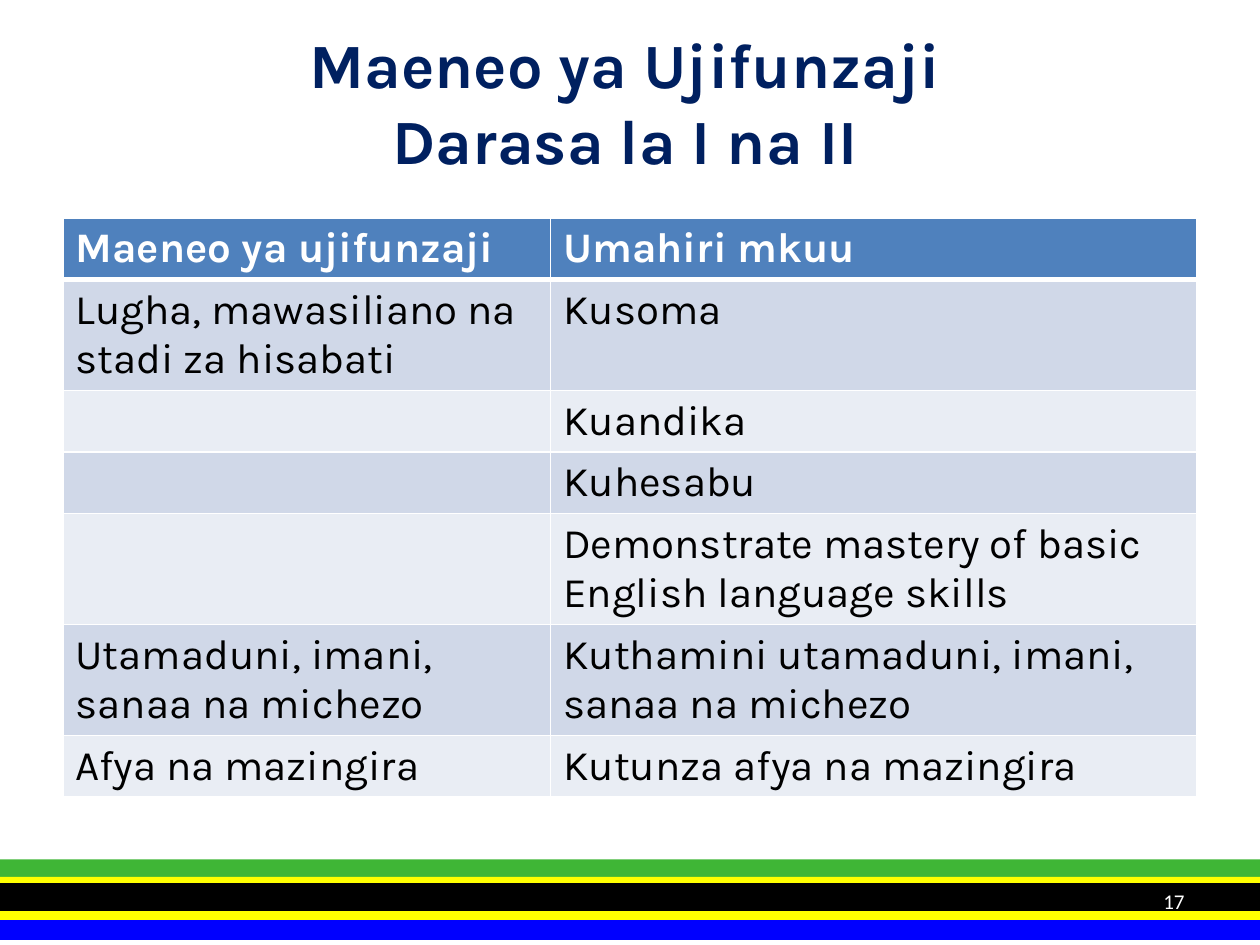
from pptx import Presentation
from pptx.dml.color import RGBColor
from pptx.enum.shapes import MSO_SHAPE
from pptx.enum.text import MSO_ANCHOR, MSO_AUTO_SIZE, PP_ALIGN
from pptx.oxml.ns import qn
from pptx.util import Inches, Pt
from lxml import etree

RECTANGLE = MSO_SHAPE.RECTANGLE
MIDDLE = MSO_ANCHOR.MIDDLE
NO_AUTOFIT = MSO_AUTO_SIZE.NONE
CENTER, RIGHT = PP_ALIGN.CENTER, PP_ALIGN.RIGHT

WHITE = RGBColor(0xFF, 0xFF, 0xFF)
BLACK = RGBColor(0x00, 0x00, 0x00)
NAVY = RGBColor(0x00, 0x20, 0x60)
GREEN = RGBColor(0x3F, 0xB6, 0x36)
YELLOW = RGBColor(0xFF, 0xFF, 0x00)
BLUE = RGBColor(0x00, 0x00, 0xFF)
HEADER_FILL = RGBColor(0x4F, 0x81, 0xBD)
ROW_FILLS = (RGBColor(0xD0, 0xD8, 0xE8), RGBColor(0xE9, 0xED, 0xF4))

# Top and height of each flag stripe, back to front
STRIPES = [
    (7.23, 0.23, BLUE),
    (6.82, 0.22, GREEN),
    (6.96, 0.11, YELLOW),
    (7.19, 0.11, YELLOW),
    (7.01, 0.22, BLACK),
]

# Learning area, main competence, row height
ROWS = [
    ("Maeneo ya ujifunzaji", "Umahiri mkuu", 0.48),
    ("Lugha, mawasiliano na stadi za hisabati", "Kusoma", 0.88),
    ("", "Kuandika", 0.48),
    ("", "Kuhesabu", 0.48),
    ("", "Demonstrate mastery of basic English language skills", 0.88),
    ("Utamaduni, imani, sanaa na michezo",
     "Kuthamini utamaduni, imani, sanaa na michezo", 0.88),
    ("Afya na mazingira", "Kutunza afya na mazingira", 0.48),
]
COLUMN_WIDTHS = (3.87, 5.13)


def format_font(font, name, size, color, bold=False):
    font.name = name
    font.size = Pt(size)
    font.bold = bold
    font.color.rgb = color


def add_stripes(slide, left, width):
    for top, height, color in STRIPES:
        s = slide.shapes.add_shape(RECTANGLE, Inches(left), Inches(top),
                                   Inches(width), Inches(height))
        s.shadow.inherit = False
        s.fill.solid()
        s.fill.fore_color.rgb = color
        s.line.fill.background()


def place_title(slide, left, top, width, height):
    title = slide.shapes.title
    title.left, title.top = Inches(left), Inches(top)
    title.width, title.height = Inches(width), Inches(height)
    tf = title.text_frame
    tf.auto_size = NO_AUTOFIT
    tf.vertical_anchor = MIDDLE
    p = tf.paragraphs[0]
    p.text = "Maeneo ya Ujifunzaji\vDarasa la I na II"
    p.alignment = CENTER
    for r in p.runs:
        format_font(r.font, "Karla", 36, NAVY, bold=True)


def set_borders(cell, bottom_width):
    tc_pr = cell._tc.get_or_add_tcPr()
    widths = {"a:lnL": 1, "a:lnR": 1, "a:lnT": 1, "a:lnB": bottom_width}
    for i, (tag, width) in enumerate(widths.items()):
        ln = etree.Element(qn(tag), w=str(Pt(width)))
        fill = etree.SubElement(ln, qn("a:solidFill"))
        etree.SubElement(fill, qn("a:srgbClr"), val=str(WHITE))
        tc_pr.insert(i, ln)  # borders come before the fill


def add_areas_table(slide, left, top, width):
    height = sum(row[-1] for row in ROWS)
    table = slide.shapes.add_table(
        len(ROWS), len(COLUMN_WIDTHS), Inches(left), Inches(top),
        Inches(width), Inches(height)).table
    for column, share in zip(table.columns, COLUMN_WIDTHS):
        column.width = Inches(width * share / sum(COLUMN_WIDTHS))
    for i, (*texts, row_height) in enumerate(ROWS):
        header = i == 0
        table.rows[i].height = Inches(row_height)
        for j, text in enumerate(texts):
            cell = table.cell(i, j)
            cell.fill.solid()
            cell.fill.fore_color.rgb = (
                HEADER_FILL if header else ROW_FILLS[(i - 1) % 2])
            set_borders(cell, 3 if header else 1)
            p = cell.text_frame.paragraphs[0]
            p.text = text
            for r in p.runs:
                format_font(r.font, "Karla", 24,
                            WHITE if header else BLACK, bold=header)


def add_page_number(slide, left, top, width, height):
    box = slide.shapes.add_textbox(Inches(left), Inches(top),
                                   Inches(width), Inches(height))
    tf = box.text_frame
    tf.word_wrap = True
    tf.vertical_anchor = MIDDLE
    p = tf.paragraphs[0]
    p.text = "17"
    p.alignment = RIGHT
    format_font(p.runs[0].font, "Calibri", 12, WHITE)


def main():
    prs = Presentation()
    prs.slide_width, prs.slide_height = Inches(10), Inches(7.5)
    slide = prs.slides.add_slide(prs.slide_layouts.get_by_name("Title Only"))
    add_stripes(slide, 0, 10)
    place_title(slide, 1.3, 0.3, 7.32, 1.01)
    add_areas_table(slide, 0.5, 1.73, 9)
    add_page_number(slide, 7.17, 6.95, 2.33, 0.4)
    prs.save("out.pptx")


if __name__ == "__main__":
    main()
